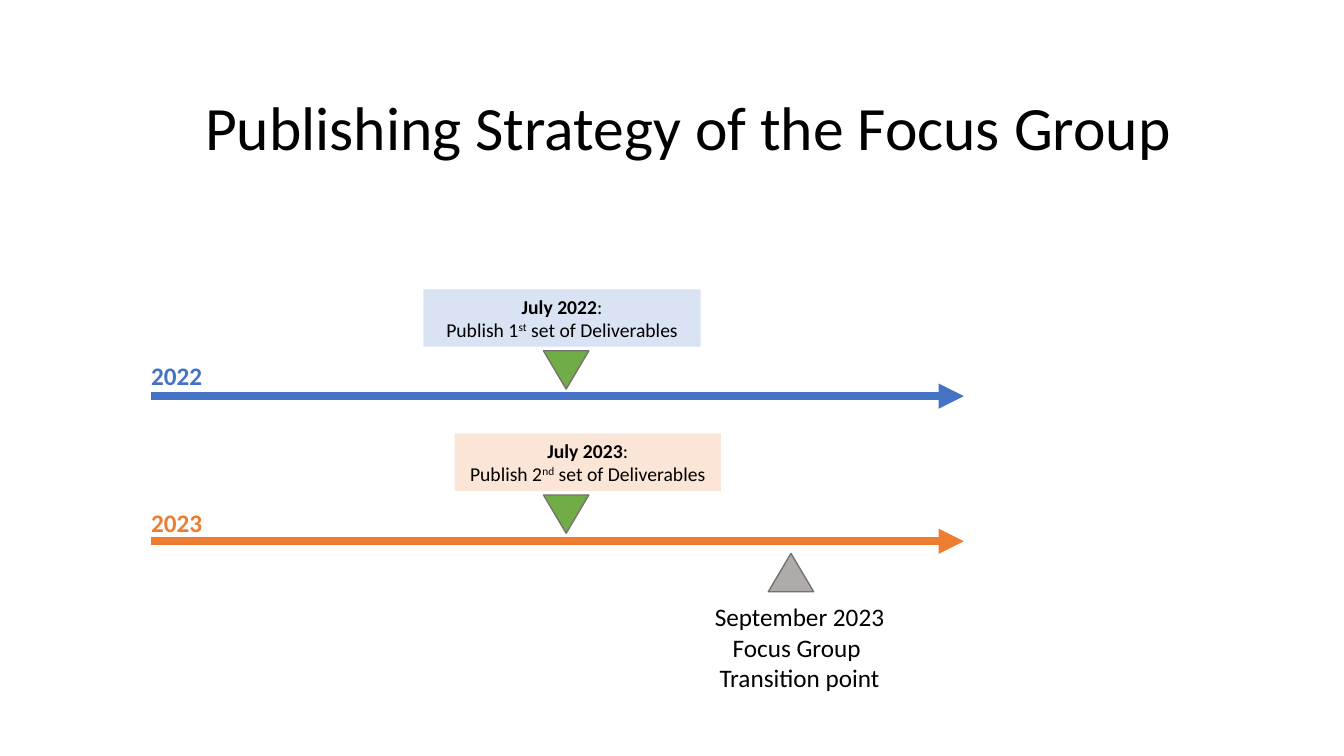
from lxml.etree import SubElement
from pptx import Presentation
from pptx.dml.color import RGBColor
from pptx.enum.shapes import MSO_CONNECTOR, MSO_SHAPE
from pptx.enum.text import MSO_ANCHOR, MSO_AUTO_SIZE, PP_ALIGN
from pptx.oxml.ns import qn
from pptx.util import Inches, Pt


def rgb(value):
    return RGBColor.from_string(value)


class TimelineSlide:
    """Holds the text style and the slide on which elements are placed."""

    font = "Calibri"
    black = "000000"
    outline = "767171"

    def __init__(self, prs):
        self.s = prs.slides.add_slide(prs.slide_layouts[5])

    def fill_text(self, tf, lines, size, color=black, bold=False, align=PP_ALIGN.CENTER):
        p = tf.paragraphs[0]
        p.alignment = align
        for i, line in enumerate(lines):
            if i:
                p.add_line_break()
                SubElement(p._p[-1], qn("a:rPr"), sz=str(size * 100))
            for text, style in line:
                r = p.add_run()
                r.text = text
                r.font.color.rgb = rgb(color)
                format_values = {"name": self.font, "size": Pt(size),
                                 "bold": bold or style == "bold"}
                for name, value in format_values.items():
                    setattr(r.font, name, value)
                if style == "super":
                    r._r.get_or_add_rPr().set("baseline", "30000")
        return p

    def title(self, text, x, y, w, h):
        sp = self.s.shapes.title
        place = {"left": x, "top": y, "width": w, "height": h}
        for name, value in place.items():
            setattr(sp, name, Inches(value))
        tf = sp.text_frame
        tf.vertical_anchor = MSO_ANCHOR.MIDDLE
        p = self.fill_text(tf, [[(text, "")]], 44)
        p.line_spacing = 0.9

    def arrow(self, x1, x2, y, color):
        c = self.s.shapes.add_connector(
            MSO_CONNECTOR.STRAIGHT, Inches(x1), Inches(y), Inches(x2), Inches(y))
        c.line.color.rgb = rgb(color)
        c.line.width = Pt(6)
        SubElement(c.line._get_or_add_ln(), qn("a:tailEnd"), type="triangle")
        SubElement(c._element.spPr, qn("a:effectLst"))

    def label(self, lines, x, y, w, h, **style):
        sp = self.s.shapes.add_textbox(Inches(x), Inches(y), Inches(w), Inches(h))
        tf = sp.text_frame
        tf.word_wrap = False
        tf.auto_size = MSO_AUTO_SIZE.SHAPE_TO_FIT_TEXT
        self.fill_text(tf, [[(line, "")] for line in lines], 18, **style)

    def shape(self, kind, x, y, w, h, fill):
        sp = self.s.shapes.add_shape(kind, Inches(x), Inches(y), Inches(w), Inches(h))
        sp.shadow.inherit = False
        sp.fill.solid()
        sp.fill.fore_color.rgb = rgb(fill)
        return sp

    def marker(self, x, y, fill, rotation=0):
        sp = self.shape(MSO_SHAPE.ISOSCELES_TRIANGLE, x, y, 0.45, 0.38, fill)
        sp.rotation = rotation
        sp.line.color.rgb = rgb(self.outline)
        sp.line.width = Pt(1)

    def milestone(self, lines, x, y, w, fill):
        sp = self.shape(MSO_SHAPE.RECTANGLE, x, y, w, 0.57, fill)
        sp.line.fill.background()
        tf = sp.text_frame
        tf.word_wrap = True
        tf.auto_size = MSO_AUTO_SIZE.SHAPE_TO_FIT_TEXT
        self.fill_text(tf, lines, 14)


def main():
    prs = Presentation()
    prs.slide_width, prs.slide_height = Inches(13.33), Inches(7.5)
    slide = TimelineSlide(prs)
    slide.title("Publishing Strategy of the Focus Group", 1.08, 0.57, 11.5, 1.45)

    years = [
        ("2022", 3.93, 3.53, "4472C4", "1", "st", 4.2, 2.87, 2.75, "DAE3F3"),
        ("2023", 5.37, 4.98, "ED7D31", "2", "nd", 4.51, 4.3, 2.64, "FBE5D6"),
    ]
    for year, y, label_y, color, number, suffix, box_x, box_y, box_w, fill in years:
        slide.arrow(1.5, 9.56, y, color)
        slide.label([year], 1.4, label_y, 0.71, 0.4,
                    color=color, bold=True, align=PP_ALIGN.LEFT)
        slide.marker(5.39, box_y + 0.61, "70AD47", rotation=180)
        slide.milestone(
            [[(f"July {year}", "bold"), (":", "")],
             [(f"Publish {number}", ""), (suffix, "super"),
              (" set of Deliverables", "")]],
            box_x, box_y, box_w, fill)

    slide.marker(7.62, 5.49, "AFABAB")
    slide.label(["September 2023", "Focus Group ", "Transition point"],
                6.98, 5.92, 1.9, 1.01)
    prs.save("out.pptx")


if __name__ == "__main__":
    main()
